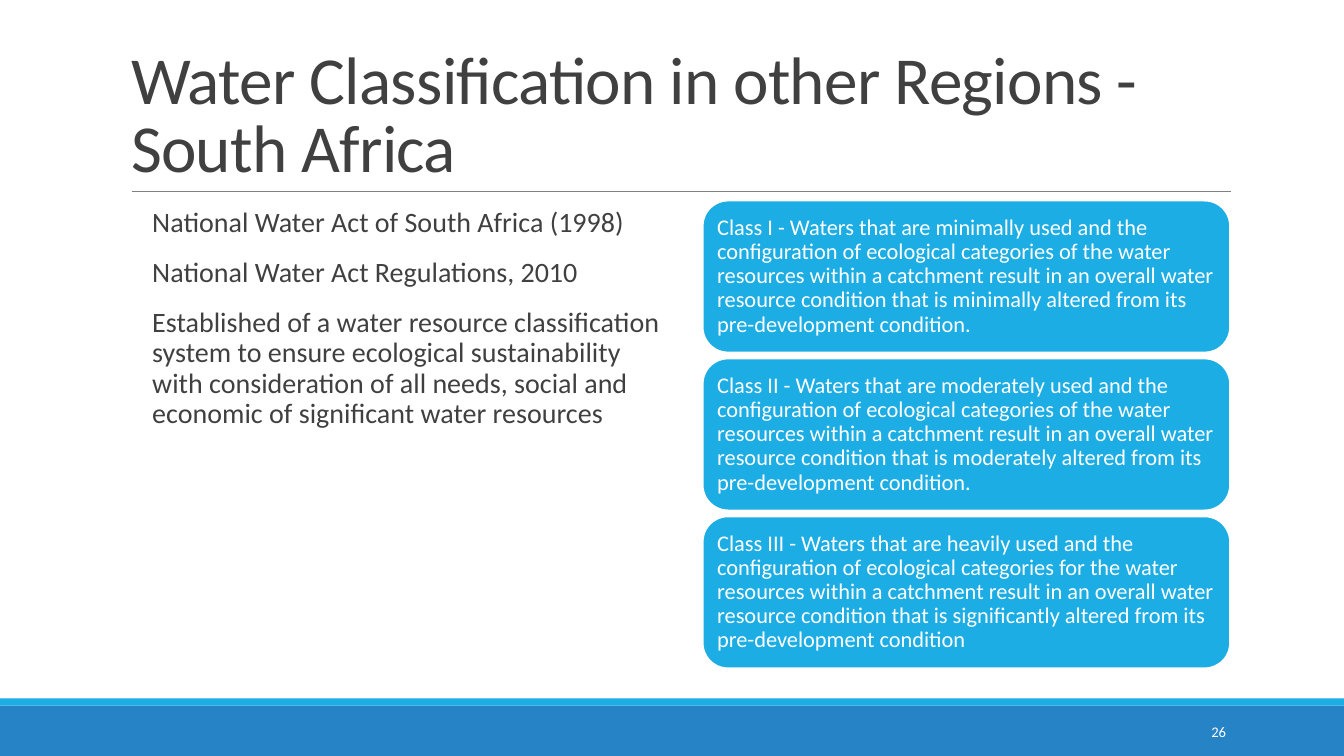
import pptx
import pptx.util
import pptx.dml.color
import pptx.enum.shapes
import pptx.enum.text
import pptx.oxml
import pptx.oxml.ns

WIDE, HIGH = 13.33, 7.5
LEFT, RIGHT = 1.2, 12.2
SKY, BLUE, DARK, GREY, WHITE = "1CADE4", "2683C6", "404040", "808080", "FFFFFF"
FONT = "Calibri"

TITLE = "Water Classification in other Regions - South Africa"
POINTS = [
    "National Water Act of South Africa (1998)",
    "National Water Act Regulations, 2010",
    "Established of a water resource classification system to ensure ecological "
    "sustainability with consideration of all needs, social and economic of "
    "significant water resources",
]
# Class number, use, linking word, change, closing mark
LEVELS = [
    ("I", "minimally", "of", "minimally", "."),
    ("II", "moderately", "of", "moderately", "."),
    ("III", "heavily", "for", "significantly", ""),
]
RULE = ("Class {} - Waters that are {} used and the configuration of ecological "
        "categories {} the water resources within a catchment result in an overall "
        "water resource condition that is {} altered from its pre-development "
        "condition{}")

inch = pptx.util.Inches
Kind = pptx.enum.shapes.MSO_SHAPE
Anchor = pptx.enum.text.MSO_ANCHOR
Align = pptx.enum.text.PP_ALIGN


def paint(color, code):
    color.rgb = pptx.dml.color.RGBColor.from_string(code)


def place(shape, box):
    shape.left, shape.top, shape.width, shape.height = map(inch, box)


def add_xml(parent, tag, inner=""):
    space = pptx.oxml.ns.nsdecls("a")
    parent.append(pptx.oxml.parse_xml(f"<a:{tag} {space}>{inner}</a:{tag.split()[0]}>"))


def style(frame, size, code, anchor, align=Align.LEFT, lead=1.0, before=0, after=0):
    frame.word_wrap = True
    frame.auto_size = pptx.enum.text.MSO_AUTO_SIZE.NONE
    frame.vertical_anchor = anchor
    for para in frame.paragraphs:
        para.alignment = align
        para.line_spacing = lead
        para.space_before = pptx.util.Pt(before)
        para.space_after = pptx.util.Pt(after)
        for run in para.runs:
            run.font.name = FONT
            run.font.size = pptx.util.Pt(size)
            paint(run.font.color, code)


def add_block(slide, kind, box, fill, edge=None):
    shape = slide.shapes.add_shape(kind, *map(inch, box))
    shape.shadow.inherit = False
    shape.fill.solid()
    paint(shape.fill.fore_color, fill)
    if edge:
        paint(shape.line.color, edge)
        shape.line.width = pptx.util.Pt(1.25)
    else:
        shape.line.fill.background()
    return shape


def add_title(slide, box):
    title = slide.shapes.title
    place(title, box)
    title.text_frame.text = TITLE
    style(title.text_frame, 48, DARK, Anchor.BOTTOM, lead=0.85)
    for run in title.text_frame.paragraphs[0].runs:
        run.font._element.set("spc", "-50")
    # Thin rule along the foot of the title
    left, top, width, height = box
    foot = top + height
    line = slide.shapes.add_connector(
        pptx.enum.shapes.MSO_CONNECTOR.STRAIGHT,
        *map(inch, (left + 0.11, foot, left + width + 0.01, foot)))
    paint(line.line.color, GREY)
    line.line.width = pptx.util.Pt(0.5)
    add_xml(line._element.spPr, "effectLst")


def add_points(slide, box):
    body = slide.placeholders[1]
    place(body, box)
    frame = body.text_frame
    frame.text = "\n".join(POINTS)
    frame.margin_left = frame.margin_right = 0
    style(frame, 20, DARK, Anchor.TOP, lead=0.9, before=12, after=2)
    # Blank bullets with a hanging indent
    for para in frame.paragraphs:
        props = para._p.get_or_add_pPr()
        props.set("marL", str(inch(0.31)))
        props.set("indent", str(-inch(0.31)))
        add_xml(props, "buClr", f'<a:srgbClr val="{SKY}"/>')
        add_xml(props, 'buChar char=" "')


def add_levels(slide, box, gap=0.06):
    left, top, width, height = box
    tall = (height - gap * (len(LEVELS) - 1)) / len(LEVELS)
    for row, level in enumerate(LEVELS):
        spot = (left, top + row * (tall + gap), width, tall)
        card = add_block(slide, Kind.ROUNDED_RECTANGLE, spot, SKY, WHITE)
        frame = card.text_frame
        frame.text = RULE.format(*level)
        frame.margin_left = frame.margin_top = frame.margin_bottom = inch(0.07)
        frame.margin_right = inch(0.06)
        style(frame, 16, WHITE, Anchor.MIDDLE, lead=0.9)


def add_footer(slide, box, number):
    left, top, width, height = box
    strip = 0.07
    add_block(slide, Kind.RECTANGLE, (left, top + strip, width, height - strip), BLUE)
    add_block(slide, Kind.RECTANGLE, (left, top, width, strip), SKY)
    # Page number
    note = slide.shapes.add_textbox(*map(inch, (RIGHT - 1.37, top + 0.13, 1.43, 0.4)))
    note.text_frame.text = number
    style(note.text_frame, 10.5, WHITE, Anchor.MIDDLE, Align.RIGHT)


def main():
    deck = pptx.Presentation()
    deck.slide_width, deck.slide_height = inch(WIDE), inch(HIGH)
    slide = deck.slides.add_slide(deck.slide_layouts[1])
    add_footer(slide, (0, 6.93, WIDE, HIGH - 6.93), "26")
    add_title(slide, (LEFT, 0.31, RIGHT - LEFT, 1.59))
    add_points(slide, (LEFT, 2.02, 5.4, 4.4))
    add_levels(slide, (6.97, 1.99, RIGHT - 6.97, 4.64))
    deck.save("out.pptx")


if __name__ == "__main__":
    main()
